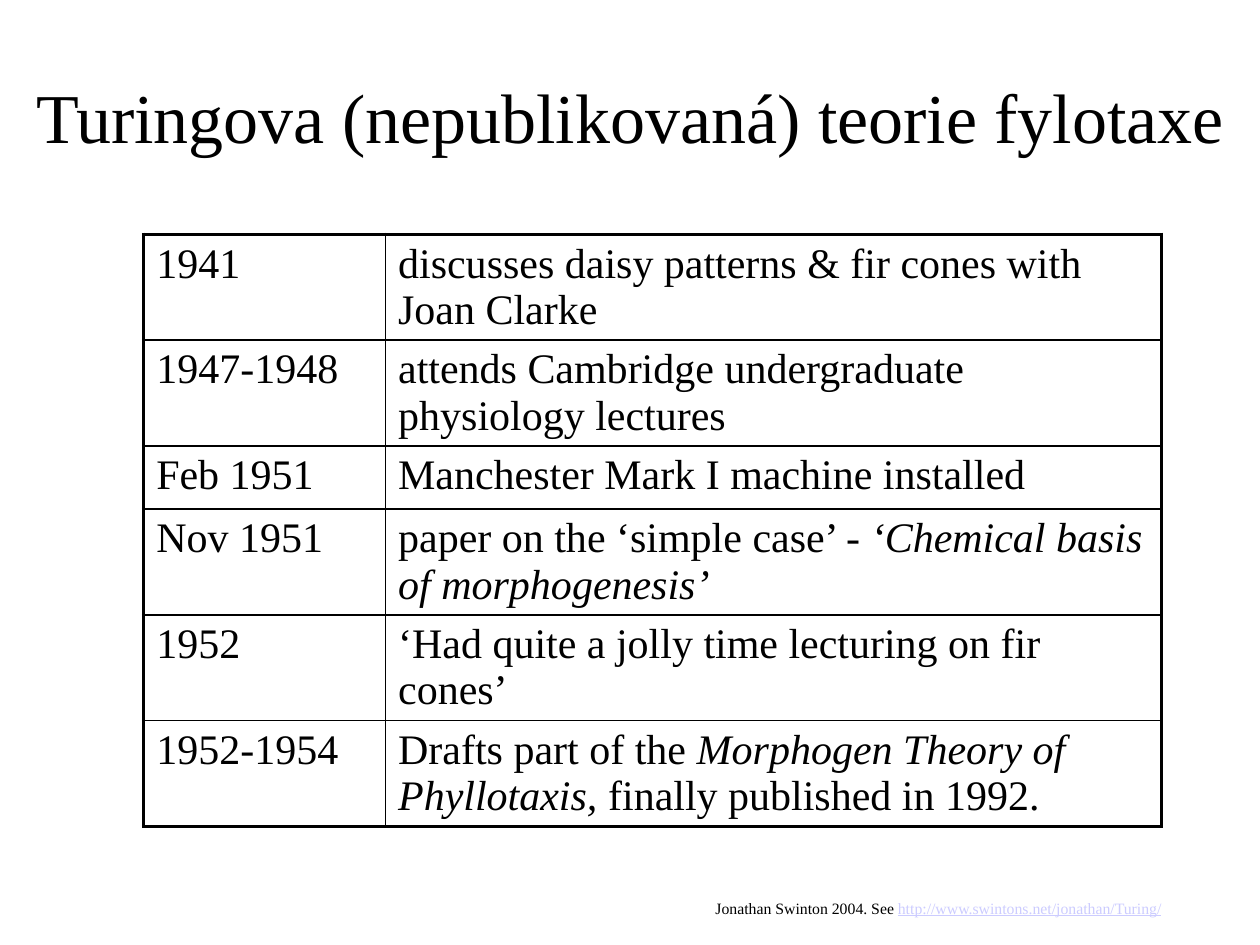
from dataclasses import dataclass

from lxml.etree import SubElement
from pptx import Presentation
from pptx.dml.color import RGBColor
from pptx.enum.text import MSO_ANCHOR, MSO_AUTO_SIZE, PP_ALIGN
from pptx.oxml.ns import qn
from pptx.util import Inches, Pt

COLORS = {"ink": "000000", "link": "CCCCFF"}
FONT = "Times New Roman"
THICK, THIN = 2.25, 1
ONE_LINE, TWO_LINES = 0.5, 0.84


@dataclass
class Span:
    text: str
    italic: bool = False
    underline: bool = False
    color: str = "ink"


@dataclass
class Event:
    date: str
    spans: list[Span]
    height: float = TWO_LINES


EVENTS = [
    Event("1941", [Span("discusses daisy patterns & fir cones with Joan Clarke")]),
    Event("1947-1948", [Span("attends Cambridge undergraduate physiology lectures")]),
    Event("Feb 1951", [Span("Manchester Mark I machine installed")], ONE_LINE),
    Event("Nov 1951", [Span("paper on the ‘simple case’ - "),
                       Span("‘Chemical basis of morphogenesis’", italic=True)]),
    Event("1952", [Span("‘Had quite a jolly time lecturing on fir cones’")]),
    Event("1952-1954", [Span("Drafts part of the "),
                        Span("Morphogen Theory of Phyllotaxis, ", italic=True),
                        Span("finally published in 1992.")]),
]


def write(frame, spans: list[Span], *, size: float, align=PP_ALIGN.LEFT) -> None:
    frame.word_wrap = True
    paragraph = frame.paragraphs[0]
    paragraph.alignment = align
    for span in spans:
        run = paragraph.add_run()
        run.text = span.text
        run.font.name = FONT
        run.font.size = Pt(size)
        run.font.italic = span.italic
        run.font.underline = span.underline
        run.font.color.rgb = RGBColor.from_string(COLORS[span.color])


def set_borders(cell, widths: dict[str, float]) -> None:
    properties = cell._tc.get_or_add_tcPr()
    for position, (side, width) in enumerate(widths.items()):
        line = SubElement(properties, qn(f"a:ln{side}"), w=str(Pt(width)))
        fill = SubElement(line, qn("a:solidFill"))
        SubElement(fill, qn("a:srgbClr"), val=COLORS["ink"])
        properties.insert(position, line)


def add_timeline(page, events: list[Event]) -> None:
    height = sum(event.height for event in events)
    table = page.shapes.add_table(len(events), 2, Inches(1.14), Inches(1.86),
                                  Inches(8.08), Inches(height)).table
    table.first_row = table.horz_banding = False
    for column, width in zip(table.columns, (1.92, 6.16)):
        column.width = Inches(width)
    last = len(events) - 1
    for row, event in enumerate(events):
        table.rows[row].height = Inches(event.height)
        for column, spans in enumerate(([Span(event.date)], event.spans)):
            cell = table.cell(row, column)
            cell.fill.background()
            write(cell.text_frame, spans, size=24)
            set_borders(cell, {
                "L": THICK if column == 0 else THIN,
                "R": THICK if column == 1 else THIN,
                "T": THICK if row == 0 else THIN,
                "B": THICK if row == last else THIN,
            })


def add_title(page, text: str) -> None:
    title = page.shapes.title
    title.left, title.top = Inches(0), Inches(0.29)
    title.width, title.height = Inches(10), Inches(1.25)
    title.text_frame.auto_size = MSO_AUTO_SIZE.NONE
    title.text_frame.vertical_anchor = MSO_ANCHOR.MIDDLE
    write(title.text_frame, [Span(text)], size=40, align=PP_ALIGN.CENTER)


def add_credit(page, spans: list[Span]) -> None:
    box = page.shapes.add_textbox(Inches(5.58), Inches(7.08), Inches(4.42), Inches(0.25))
    write(box.text_frame, spans, size=9)


def main() -> None:
    deck = Presentation()
    deck.slide_width, deck.slide_height = Inches(10), Inches(7.5)
    page = deck.slides.add_slide(deck.slide_layouts[5])
    add_timeline(page, EVENTS)
    add_credit(page, [
        Span("Jonathan Swinton 2004. See "),
        Span("http://www.swintons.net/jonathan/Turing/", underline=True, color="link"),
    ])
    add_title(page, "Turingova (nepublikovaná) teorie fylotaxe")
    deck.save("out.pptx")


if __name__ == "__main__":
    main()
